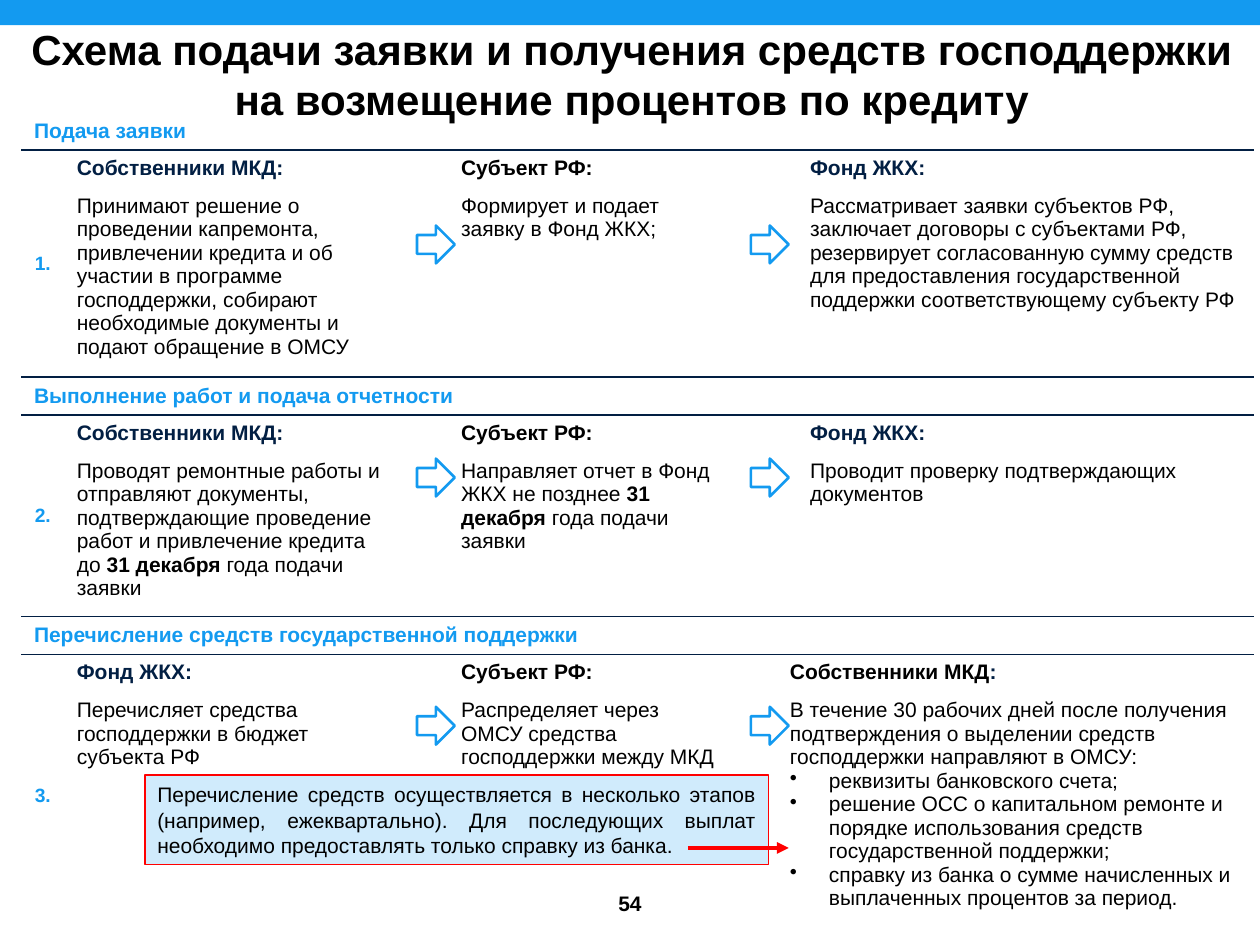
from itertools import product

from lxml.etree import SubElement
from pptx import Presentation
from pptx.dml.color import RGBColor
from pptx.enum.shapes import MSO_CONNECTOR, MSO_SHAPE
from pptx.enum.text import MSO_ANCHOR as Anchor, PP_ALIGN as Align
from pptx.oxml import parse_xml
from pptx.oxml.ns import nsdecls, qn
from pptx.util import Inches, Pt

BLUE = RGBColor(0x13, 0x9A, 0xF0)
NAVY = RGBColor(0x02, 0x1F, 0x43)
PALE = RGBColor(0xD0, 0xEB, 0xFC)
RED = RGBColor(0xFF, 0, 0)
BLACK = RGBColor(0, 0, 0)
FONT = "Arial"
NO_STYLE_NO_GRID = "{2D5ABB26-0587-4C30-8999-92F81FD0307C}"

COLUMNS = [0.34, 2.46, 0.3, 0.29, 1.93, 0.33, 0.35, 0.16, 3.62]
ROWS = [0.3, 0.3, 1.5, 0.3, 0.3, 1.3, 0.3, 0.3, 1.95]
ARROW_LEFTS = [3.31, 5.96]
ARROW_TOPS = [1.79, 3.64, 5.61]
ARROW_SIZE = 0.3


def plain(text):
    return [(text, False, BLACK)]


# Each section: heading, merged column ranges, and steps as
# (column, title runs, body paragraphs); a run is (text, bold, colour).
OWNERS = "Собственники МКД"
REGION = [("Субъект РФ:", True, BLACK)]
FUND = [("Фонд ЖКХ:", True, NAVY)]
SECTIONS = [
    ("Подача заявки", [(1, 2), (5, 7)], [
        (1, [(OWNERS + ":", True, NAVY)], [plain(
            "Принимают решение о проведении капремонта, привлечении кредита и об "
            "участии в программе господдержки, собирают необходимые документы и "
            "подают обращение в ОМСУ")]),
        (4, REGION, [plain("Формирует и подает заявку в Фонд ЖКХ;")]),
        (8, FUND, [plain(
            "Рассматривает заявки субъектов РФ, заключает договоры с субъектами РФ, "
            "резервирует согласованную сумму средств для предоставления "
            "государственной поддержки соответствующему субъекту РФ")]),
    ]),
    ("Выполнение работ и подача отчетности", [(1, 2), (4, 5), (6, 7)], [
        (1, [(OWNERS + ":", True, NAVY)], [[
            ("Проводят ремонтные работы и отправляют документы, подтверждающие "
             "проведение работ и привлечение кредита  до ", False, BLACK),
            ("31 декабря", True, BLACK),
            (" года подачи заявки", False, BLACK)]]),
        (4, REGION, [[
            ("Направляет отчет в Фонд ЖКХ не позднее ", False, BLACK),
            ("31 декабря ", True, BLACK),
            ("года подачи заявки", False, BLACK)]]),
        (8, FUND, [plain("Проводит проверку подтверждающих документов")]),
    ]),
    ("Перечисление средств государственной поддержки", [(2, 3), (4, 5), (7, 8)], [
        (1, FUND, [plain("Перечисляет средства господдержки в бюджет субъекта РФ")]),
        (4, REGION, [plain("Распределяет через ОМСУ средства господдержки между МКД")]),
        (7, [(OWNERS, True, BLACK), (":", True, NAVY)], [
            plain("В течение 30 рабочих дней после получения подтверждения о "
                  "выделении средств господдержки направляют в ОМСУ:"),
            plain("реквизиты банковского счета;"),
            plain("решение ОСС о капитальном ремонте и порядке использования "
                  "средств государственной поддержки;"),
            plain("справку из банка о сумме начисленных и выплаченных процентов "
                  "за период.")]),
    ]),
]


def add_runs(paragraph, runs, size=12, align=Align.LEFT):
    paragraph.alignment = align
    for text, bold, color in runs:
        run = paragraph.add_run()
        run.text = text
        run.font.name = FONT
        run.font.size = Pt(size)
        run.font.bold = bold
        run.font.color.rgb = color


def add_text(slide, box, runs, size):
    text_box = slide.shapes.add_textbox(*map(Inches, box))
    frame = text_box.text_frame
    frame.word_wrap = True
    frame.vertical_anchor = Anchor.MIDDLE
    add_runs(frame.paragraphs[0], runs, size, Align.CENTER)


def add_box(shapes, kind, box, fill=None, line=None, width=0.75):
    shape = shapes.add_shape(kind, *map(Inches, box))
    shape.shadow.inherit = False
    if fill is None:
        shape.fill.background()
    else:
        shape.fill.solid()
        shape.fill.fore_color.rgb = fill
    if line is None:
        shape.line.fill.background()
    else:
        shape.line.color.rgb = line
        shape.line.width = Pt(width)
    return shape


def set_borders(cell, ruled_sides):
    """Rule the named sides in navy and leave the others without a line."""
    properties = cell._tc.get_or_add_tcPr()
    for position, side in enumerate(("lnL", "lnR", "lnT", "lnB")):
        paint = "<a:noFill/>"
        if side in ruled_sides:
            paint = f'<a:solidFill><a:srgbClr val="{NAVY}"/></a:solidFill>'
        properties.insert(position, parse_xml(
            f'<a:{side} {nsdecls("a")} w="12700">{paint}</a:{side}>'))


def set_bullet(paragraph):
    properties = paragraph._p.get_or_add_pPr()
    indent = Inches(0.31)
    properties.set("marL", str(indent))
    properties.set("indent", str(-indent))
    SubElement(properties, qn("a:buChar")).set("char", "•")


def fill_section(table, number, heading, merges, steps):
    top = 3 * number
    table.cell(top, 0).merge(table.cell(top, len(COLUMNS) - 1))
    table.cell(top + 1, 0).merge(table.cell(top + 2, 0))
    for row, (first, last) in product((top + 1, top + 2), merges):
        table.cell(row, first).merge(table.cell(row, last))

    label = table.cell(top, 0)
    add_runs(label.text_frame.paragraphs[0], [(heading, True, BLUE)])
    index = table.cell(top + 1, 0)
    add_runs(index.text_frame.paragraphs[0],
             [(f"{number + 1}.", True, BLUE)], 11, Align.CENTER)
    label.vertical_anchor = index.vertical_anchor = Anchor.MIDDLE

    for column, title, body in steps:
        add_runs(table.cell(top + 1, column).text_frame.paragraphs[0], title)
        frame = table.cell(top + 2, column).text_frame
        for position, runs in enumerate(body):
            paragraph = frame.add_paragraph() if position else frame.paragraphs[0]
            add_runs(paragraph, runs)
            if position:
                set_bullet(paragraph)


def add_scheme(slide):
    table = slide.shapes.add_table(
        len(ROWS), len(COLUMNS), Inches(0.17), Inches(0.89),
        Inches(sum(COLUMNS)), Inches(sum(ROWS))).table
    table.first_row = table.horz_banding = False
    table._tbl.tblPr.find(qn("a:tableStyleId")).text = NO_STYLE_NO_GRID
    for column, width in zip(table.columns, COLUMNS):
        column.width = Inches(width)
    for row, height in zip(table.rows, ROWS):
        row.height = Inches(height)
    for number, section in enumerate(SECTIONS):
        fill_section(table, number, *section)

    last = len(ROWS) - 1
    for row, column in product(range(len(ROWS)), range(len(COLUMNS))):
        cell = table.cell(row, column)
        cell.fill.background()
        ruled_sides = set()
        if row % 3 != 1 and row != last:
            ruled_sides.add("lnB")
        if row % 3 != 2 and row:
            ruled_sides.add("lnT")
        set_borders(cell, ruled_sides)
        if not cell.text_frame.text:
            # Keeps empty cells from stretching their row
            end = SubElement(cell.text_frame.paragraphs[0]._p, qn("a:endParaRPr"))
            end.set("sz", "1200")


def add_note(slide):
    group = slide.shapes.add_group_shape()
    note = add_box(group.shapes, MSO_SHAPE.RECTANGLE, (1.15, 6.15, 4.95, 0.71), PALE, RED)
    frame = note.text_frame
    frame.word_wrap = True
    frame.vertical_anchor = Anchor.MIDDLE
    add_runs(frame.paragraphs[0], plain(
        "Перечисление средств осуществляется в несколько этапов (например, "
        "ежеквартально). Для последующих выплат необходимо предоставлять только "
        "справку из банка."), align=Align.JUSTIFY)
    pointer = group.shapes.add_connector(
        MSO_CONNECTOR.STRAIGHT, *map(Inches, (5.46, 6.73, 6.26, 6.73)))
    pointer.line.color.rgb = RED
    pointer.line.width = Pt(2.25)
    SubElement(pointer.line._get_or_add_ln(), qn("a:tailEnd")).set("type", "triangle")
    SubElement(pointer._element.spPr, qn("a:effectLst"))


def main():
    presentation = Presentation()
    presentation.slide_width, presentation.slide_height = Inches(10), Inches(7.5)
    slide = presentation.slides.add_slide(presentation.slide_layouts[6])
    add_box(slide.shapes, MSO_SHAPE.RECTANGLE, (0, 0, 10, 0.2), BLUE)
    add_text(slide, (4.56, 6.97, 0.88, 0.39), [("54", True, BLACK)], 12)
    add_text(slide, (0.03, 0.13, 9.97, 0.91), [(
        "Схема подачи заявки и получения средств господдержки "
        "на возмещение процентов по кредиту", True, BLACK)], 24)
    add_scheme(slide)
    for top, left in product(ARROW_TOPS, ARROW_LEFTS):
        add_box(slide.shapes, MSO_SHAPE.RIGHT_ARROW,
                (left, top, ARROW_SIZE, ARROW_SIZE), line=BLUE, width=1.5)
    add_note(slide)
    presentation.save("out.pptx")


if __name__ == "__main__":
    main()
